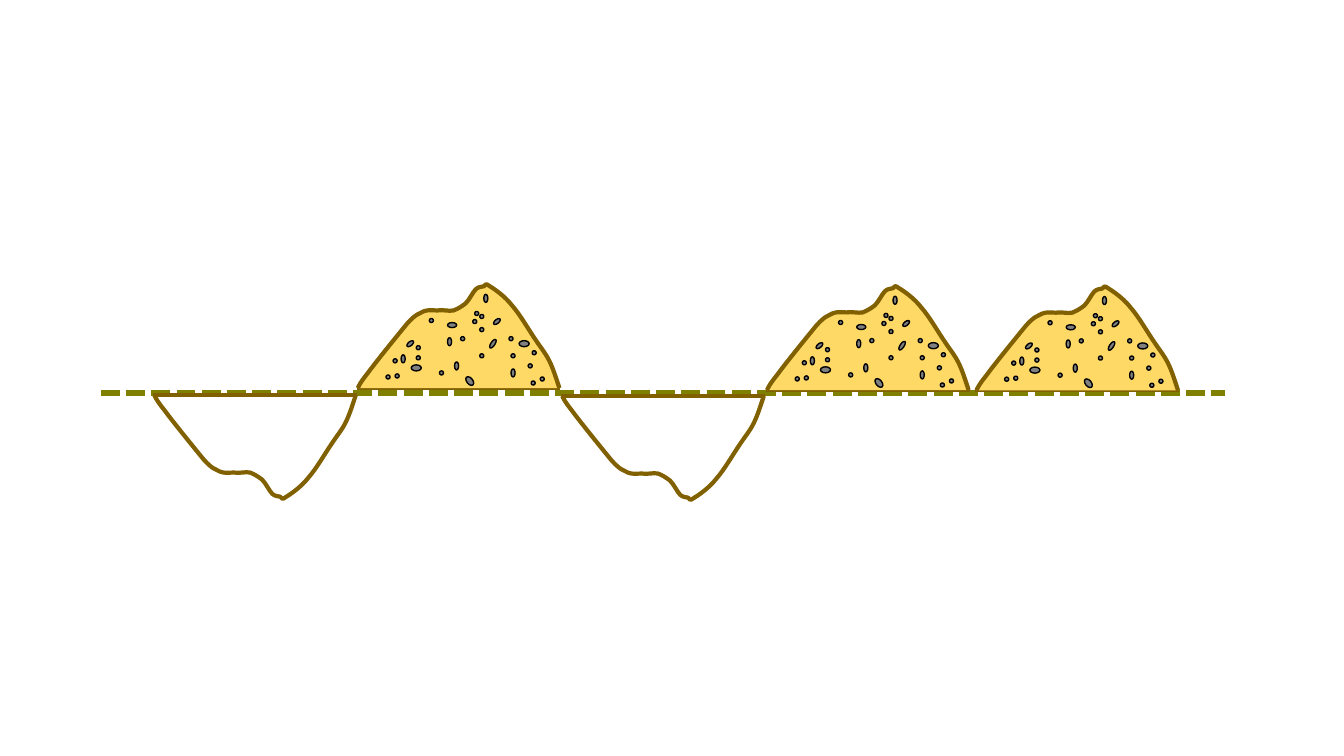
from dataclasses import dataclass
from lxml import etree
from pptx import Presentation
from pptx.dml.color import RGBColor
from pptx.enum.dml import MSO_LINE
from pptx.enum.shapes import MSO_CONNECTOR, MSO_SHAPE
from pptx.oxml.ns import qn
from pptx.util import Pt

SOIL, SAND, GROUND, STONE, INK = "806000", "FFD966", "808000", "808080", "000000"
BOX_WIDTH = 144
PROFILE_UNITS = 200
PEAK = 103

# fmt: off
PROFILE = [
    (0, 0), (1, 2), (2, 5), (10, 15), (18, 26), (40, 53), (49, 64),
    (58, 74), (60, 73), (65, 76), (70, 78), (74, 77), (79, 77),
    (84, 78), (90, 76), (95, 77), (100, 79), (103, 81), (107, 84),
    (111, 88), (114, 95), (117, 98), (120, 101), (123, 100), (125, 101),
    (127, 102), (126, 105), (131, 101), (136, 98), (146, 91), (153, 82),
    (161, 73), (170, 57), (177, 47), (183, 38), (186, 35), (190, 27),
    (194, 19), (197, 9), (200, 0),
]
DOTS = [
    (58, 61), (35, 74), (121, 43), (152, 69), (81, 86), (58, 71), (71, 34),
    (181, 92), (102, 52), (37, 89), (116, 27), (28, 90), (114, 35), (121, 69),
    (121, 30), (150, 52), (173, 66), (169, 79), (172, 96),
]
# fmt: on
OVALS = [
    (53, 80, 10, 6, 0), (160, 56, 10, 6, 0), (106, 93, 10, 6, 51),
    (89, 38, 9, 5, 0), (132, 54, 4, 10, 33.7), (50, 55, 4, 8, 51),
    (89, 53, 4, 8, 0), (136, 33, 4, 8, 51), (152, 84, 4, 8, 0),
    (96, 77, 4, 8, 0), (43, 70, 4, 8, 0), (125, 10, 4, 8, 0),
]
PEBBLES = [(x, y, 4, 4, 0) for x, y in DOTS] + OVALS


@dataclass
class Box:
    left: float
    base: float
    width: float = BOX_WIDTH

    @property
    def unit(self):
        return self.width / PROFILE_UNITS

    def point(self, x, rise):
        return Pt(self.left + x * self.unit), Pt(self.base - rise * self.unit)


def color(value):
    return RGBColor.from_string(value)


def style_line(line, value, width):
    line.color.rgb = color(value)
    line.width = Pt(width)


def add_line(shapes, start, end, value, width):
    connector = shapes.add_connector(MSO_CONNECTOR.STRAIGHT, *start, *end)
    style_line(connector.line, value, width)
    etree.SubElement(connector.element.spPr, qn("a:effectLst"))
    return connector


def bend_segments(shape):
    outline = shape.element.find(".//" + qn("a:path"))
    segments = outline.findall(qn("a:lnTo"))
    for index in range(0, len(segments), 3):
        curve = etree.SubElement(outline, qn("a:cubicBezTo"))
        for segment in segments[index:index + 3]:
            curve.append(segment[0])
            outline.remove(segment)


def add_profile(shapes, box, direction):
    add_line(shapes, box.point(-1, 0), box.point(PROFILE_UNITS + 1, 0), SOIL, 3)
    points = [box.point(x, rise * direction) for x, rise in PROFILE]
    builder = shapes.build_freeform(*points[0])
    builder.add_line_segments(points[1:], close=False)
    shape = builder.convert_to_shape()
    bend_segments(shape)
    shape.shadow.inherit = False
    style_line(shape.line, SOIL, 3)
    return shape


def add_pebble(shapes, box, x, depth, width, height, rotation):
    left, top = box.point(x, PEAK - depth)
    size = Pt(width * box.unit), Pt(height * box.unit)
    pebble = shapes.add_shape(MSO_SHAPE.OVAL, left, top, *size)
    pebble.rotation = rotation
    pebble.shadow.inherit = False
    pebble.fill.solid()
    pebble.fill.fore_color.rgb = color(STONE)
    style_line(pebble.line, INK, 1)


def add_hill(shapes, box):
    hill = add_profile(shapes, box, 1)
    hill.fill.solid()
    hill.fill.fore_color.rgb = color(SAND)
    for pebble in PEBBLES:
        add_pebble(shapes, box, *pebble)


def add_pit(shapes, box):
    add_profile(shapes, box, -1).fill.background()


def add_ground(shapes, left, right, level):
    ground = add_line(shapes, (Pt(left), Pt(level)), (Pt(right), Pt(level)), GROUND, 4.5)
    ground.line.dash_style = MSO_LINE.SQUARE_DOT


def main():
    deck = Presentation()
    deck.slide_width, deck.slide_height = Pt(960), Pt(540)
    page = deck.slides.add_slide(deck.slide_layouts[6])
    terrain = page.shapes.add_group_shape().shapes
    add_ground(terrain, 72, 874.8, 280.8)
    for left, base in [(255.6, 277.2), (547.9, 278.6), (697.5, 278.8)]:
        add_hill(terrain.add_group_shape().shapes, Box(left, base))
    for left, base in [(401.6, 282.8), (110.2, 282.1)]:
        add_pit(terrain.add_group_shape().shapes, Box(left, base))
    deck.save("out.pptx")


if __name__ == "__main__":
    main()
